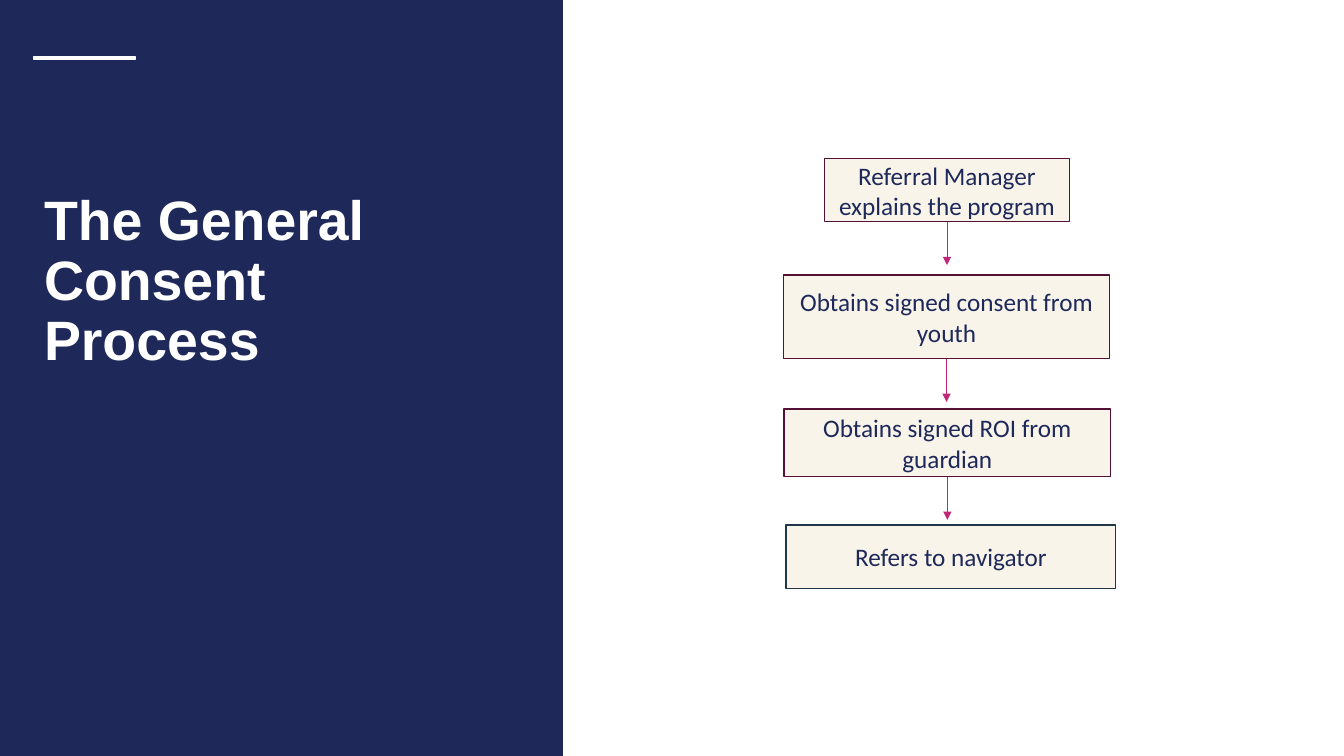
import pptx
import pptx.util
import pptx.dml.color
import pptx.enum.shapes
import pptx.enum.text
import pptx.oxml
import pptx.oxml.ns
from pptx.util import Cm

NAVY, CREAM, WHITE = "1E295A", "F8F4EA", "FFFFFF"
PLUM, SLATE, PINK = "541135", "203649", "C0277A"


def color(hex_code):
    return pptx.dml.color.RGBColor.from_string(hex_code)


def add_rectangle(left, top, width, height, fill, line):
    shape = slide.shapes.add_shape(
        pptx.enum.shapes.MSO_SHAPE.RECTANGLE, Cm(left), Cm(top), Cm(width), Cm(height))
    shape.shadow.inherit = False
    shape.fill.solid()
    shape.fill.fore_color.rgb = color(fill)
    shape.line.color.rgb = color(line)
    shape.line.width = pptx.util.Pt(1)
    return shape


presentation = pptx.Presentation()
presentation.slide_width = Cm(33.87)
presentation.slide_height = Cm(19.05)
slide = presentation.slides.add_slide(presentation.slide_layouts[6])

# Left panel with accent bar
add_rectangle(0, 0, 14.17, 19.05, NAVY, NAVY)
add_rectangle(0.86, 1.42, 2.54, 0.08, WHITE, WHITE)

# Title
title = slide.shapes.add_textbox(Cm(0.86), Cm(5.28), Cm(11.1), Cm(3.68))
title.text_frame.word_wrap = True
title.text_frame.vertical_anchor = pptx.enum.text.MSO_ANCHOR.MIDDLE
paragraph = title.text_frame.paragraphs[0]
paragraph.text = "The General Consent Process"
paragraph.line_spacing = 0.9
paragraph.font.name = "Arial"
paragraph.font.size = pptx.util.Pt(39.6)
paragraph.font.bold = True
paragraph.font.color.rgb = color(WHITE)

# Process steps: text, left, top, width, height, outline
steps = [
    ("Referral Manager\nexplains the program", 20.78, 3.99, 6.17, 1.6, PLUM),
    ("Obtains signed consent from youth", 19.74, 6.93, 8.23, 2.11, PLUM),
    ("Obtains signed ROI from guardian", 19.76, 10.31, 8.23, 1.7, PLUM),
    ("Refers to navigator", 19.81, 13.23, 8.31, 1.6, SLATE),
]
boxes = []
for text, left, top, width, height, outline in steps:
    box = add_rectangle(left, top, width, height, CREAM, outline)
    box.text_frame.word_wrap = True
    box.text_frame.vertical_anchor = pptx.enum.text.MSO_ANCHOR.MIDDLE
    box.text_frame.text = text
    for paragraph in box.text_frame.paragraphs:
        paragraph.alignment = pptx.enum.text.PP_ALIGN.CENTER
        paragraph.font.name = "Calibri"
        paragraph.font.size = pptx.util.Pt(18)
        paragraph.font.color.rgb = color(NAVY)
    boxes.append(box)

# Arrows leaving the bottom of every step but the last
for box in boxes[:-1]:
    center = box.left + box.width // 2
    bottom = box.top + box.height
    arrow = slide.shapes.add_connector(
        pptx.enum.shapes.MSO_CONNECTOR.STRAIGHT, center, bottom, center, bottom + Cm(1.09))
    arrow.begin_connect(box, 2)
    arrow.line.color.rgb = color(PINK)
    arrow.line.width = pptx.util.Pt(0.5)
    head = pptx.oxml.parse_xml(
        f'<a:tailEnd {pptx.oxml.ns.nsdecls("a")} type="triangle"/>')
    arrow.line._get_or_add_ln().append(head)
    effects = pptx.oxml.parse_xml(f'<a:effectLst {pptx.oxml.ns.nsdecls("a")}/>')
    arrow._element.spPr.append(effects)

presentation.save("out.pptx")
